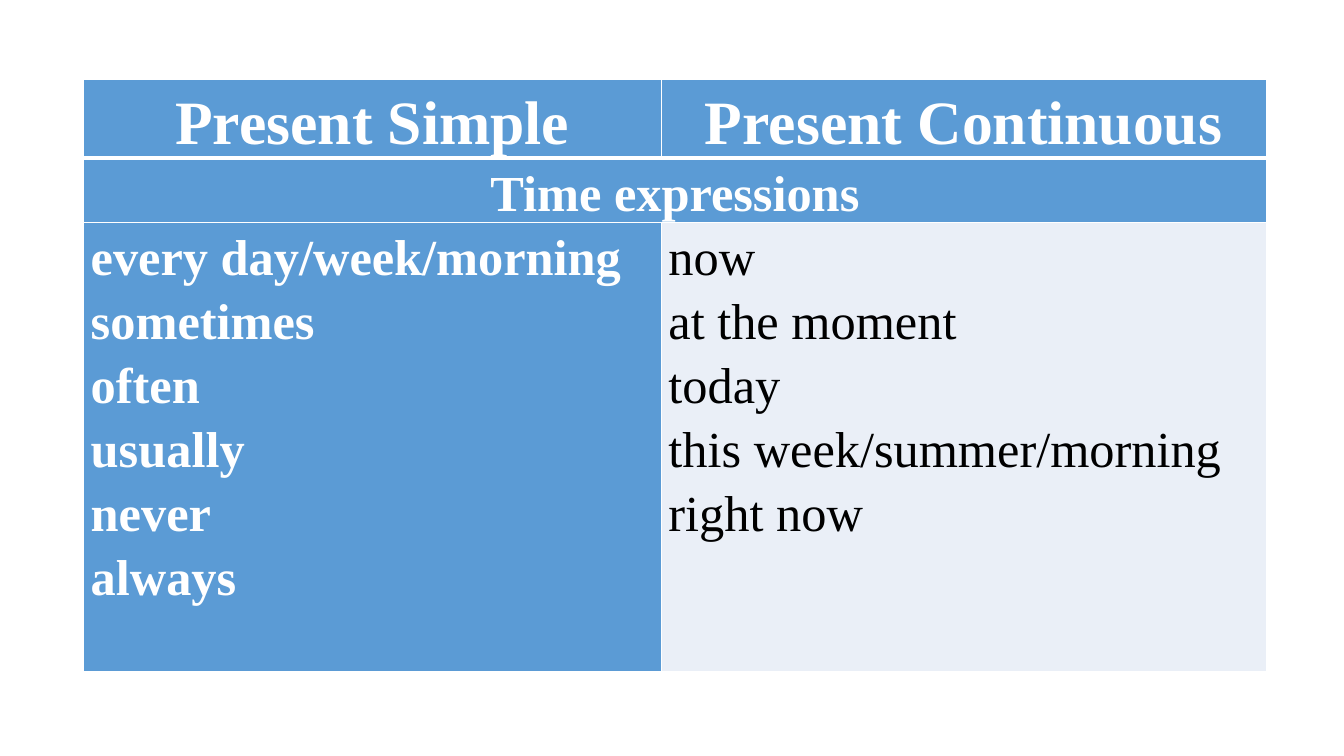
from dataclasses import dataclass

from lxml import etree
from pptx import Presentation
from pptx import util as u
from pptx.dml import color
from pptx.enum import text
from pptx.oxml import ns


@dataclass(frozen=True)
class Theme:
    font: str = "Times New Roman"
    blue: str = "5B9BD5"
    pale: str = "EAEFF7"
    white: str = "FFFFFF"
    black: str = "000000"
    heading_size: int = 44
    body_size: int = 36
    line_spacing: float = 1.15
    thin_border: int = 1
    thick_border: int = 3


THEME = Theme()
COLUMN_WIDTHS = (5.73, 6)
ROW_HEIGHTS = (0.6, 0.6, 4.46)


@dataclass(frozen=True)
class CellContent:
    row: int
    column: int
    lines: tuple[str, ...]
    size: int = THEME.body_size
    fill: str = THEME.blue
    text_color: str = THEME.white
    bold: bool = True
    centered: bool = False


CONTENTS = (
    CellContent(0, 0, ("Present Simple",), size=THEME.heading_size, centered=True),
    CellContent(0, 1, ("Present Continuous",), size=THEME.heading_size, centered=True),
    CellContent(1, 0, ("Time expressions",), centered=True),
    CellContent(
        2, 0,
        ("every day/week/morning", "sometimes", "often", "usually", "never", "always"),
    ),
    CellContent(
        2, 1,
        ("now", "at the moment", "today", "this week/summer/morning", "right now"),
        fill=THEME.pale, text_color=THEME.black, bold=False,
    ),
)


def write_text(frame, lines: tuple[str, ...], *, size: int, text_color: str,
               bold: bool, centered: bool) -> None:
    frame.text = "\n".join(lines)
    for paragraph in frame.paragraphs:
        paragraph.line_spacing = THEME.line_spacing
        paragraph.alignment = text.PP_ALIGN.CENTER if centered else text.PP_ALIGN.LEFT
        for run in paragraph.runs:
            run.font.name = THEME.font
            run.font.size = u.Pt(size)
            run.font.bold = bold
            run.font.color.rgb = color.RGBColor.from_string(text_color)


def add_borders(cell, row: int) -> None:
    properties = cell._tc.get_or_add_tcPr()
    thick_side = {0: "lnB", 1: "lnT"}.get(row)
    for side in ("lnL", "lnR", "lnT", "lnB"):
        width = THEME.thick_border if side == thick_side else THEME.thin_border
        line = etree.SubElement(properties, ns.qn(f"a:{side}"), w=str(u.Pt(width)))
        fill = etree.SubElement(line, ns.qn("a:solidFill"))
        etree.SubElement(fill, ns.qn("a:srgbClr"), val=THEME.white)


def fill_cell(cell, content: CellContent) -> None:
    cell.fill.solid()
    cell.fill.fore_color.rgb = color.RGBColor.from_string(content.fill)
    write_text(cell.text_frame, content.lines, size=content.size,
               text_color=content.text_color, bold=content.bold,
               centered=content.centered)


def add_tense_table(slide) -> None:
    table = slide.shapes.add_table(
        len(ROW_HEIGHTS), len(COLUMN_WIDTHS), u.Inches(0.83), u.Inches(0.79),
        u.Inches(sum(COLUMN_WIDTHS)), u.Inches(sum(ROW_HEIGHTS)),
    ).table
    table.first_row = False
    table.horz_banding = False
    for column, width in zip(table.columns, COLUMN_WIDTHS):
        column.width = u.Inches(width)
    for index, (row, height) in enumerate(zip(table.rows, ROW_HEIGHTS)):
        row.height = u.Inches(height)
        for cell in row.cells:
            cell.margin_left = cell.margin_right = u.Inches(0.07)
            cell.margin_top = cell.margin_bottom = 0
            add_borders(cell, index)
    table.cell(1, 0).merge(table.cell(1, 1))
    for content in CONTENTS:
        fill_cell(table.cell(content.row, content.column), content)


def main() -> None:
    presentation = Presentation()
    presentation.slide_width = u.Inches(13.33)
    presentation.slide_height = u.Inches(7.5)
    slide = presentation.slides.add_slide(presentation.slide_layouts[6])
    add_tense_table(slide)
    presentation.save("out.pptx")


if __name__ == "__main__":
    main()
